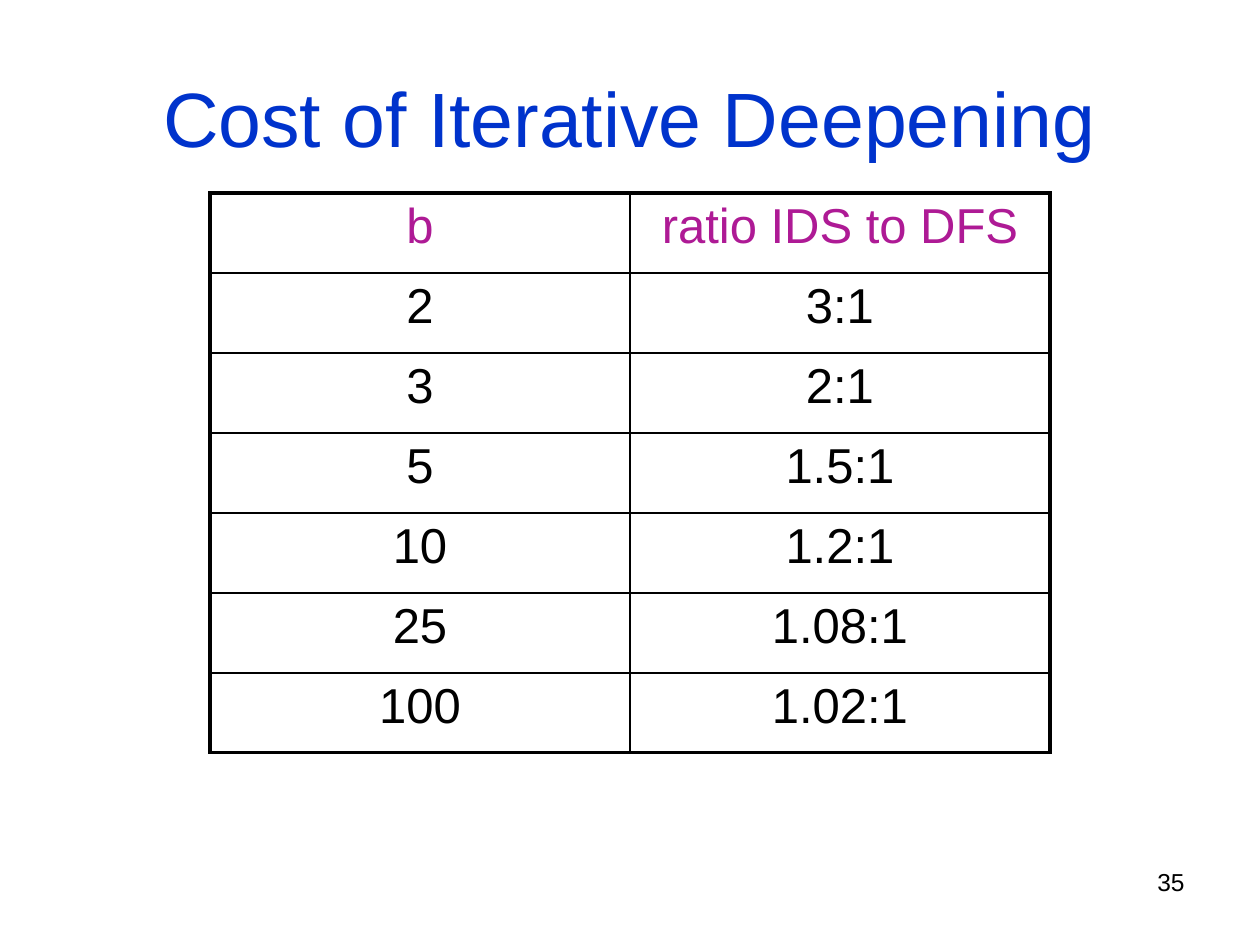
"""Build the slide on the cost of iterative deepening."""
import lxml.etree
import pptx
import pptx.dml.color
import pptx.enum.shapes
import pptx.enum.text
import pptx.oxml.ns
import pptx.util

SCALE = 914400 / 126
COLORS = {"title": "0033CC", "header": "AE1A95", "ink": "000000", "paper": "FFFFFF"}
ALIGN = pptx.enum.text.PP_ALIGN
ANCHOR = pptx.enum.text.MSO_ANCHOR
ROWS = [
    ("b", "ratio IDS to DFS"),
    ("2", "3:1"),
    ("3", "2:1"),
    ("5", "1.5:1"),
    ("10", "1.2:1"),
    ("25", "1.08:1"),
    ("100", "1.02:1"),
]
LEFT, TOP, COLUMN_WIDTH, ROW_HEIGHT = 210, 193, 420, 80


def px(*lengths):
    return [pptx.util.Emu(round(length * SCALE)) for length in lengths]


def write(frame, text, size, color, align):
    para = frame.paragraphs[0]
    para.text = text
    para.alignment = align
    para.font.name = "Arial"
    para.font.size = pptx.util.Pt(size)
    para.font.color.rgb = pptx.dml.color.RGBColor.from_string(COLORS[color])


deck = pptx.Presentation()
deck.slide_width, deck.slide_height = px(1260, 945)
page = deck.slides.add_slide(deck.slide_layouts[6])
page.background.fill.solid()
page.background.fill.fore_color.rgb = pptx.dml.color.RGBColor.from_string(COLORS["paper"])

for text, place, size, color, align, anchor in [
    ("35", (903, 861, 294, 66), 14, "ink", ALIGN.RIGHT, ANCHOR.TOP),
    ("Cost of Iterative Deepening", (63, 38, 1134, 158), 44, "title", ALIGN.CENTER, ANCHOR.MIDDLE),
]:
    box = page.shapes.add_textbox(*px(*place))
    box.text_frame.word_wrap = True
    box.text_frame.vertical_anchor = anchor
    write(box.text_frame, text, size, color, align)

column_count = len(ROWS[0])
width, height = column_count * COLUMN_WIDTH, len(ROWS) * ROW_HEIGHT
table = page.shapes.add_table(
    len(ROWS), column_count, *px(LEFT, TOP, width, height)
).table
table.first_row = table.horz_banding = False
for row in table.rows:
    row.height = px(ROW_HEIGHT)[0]
for column in table.columns:
    column.width = px(COLUMN_WIDTH)[0]

for row_index, values in enumerate(ROWS):
    for column_index, value in enumerate(values):
        cell = table.cell(row_index, column_index)
        color = "header" if row_index == 0 else "ink"
        write(cell.text_frame, value, 28, color, ALIGN.CENTER)
        cell.fill.background()
        outer_sides = {
            "lnL": column_index == 0,
            "lnR": column_index == column_count - 1,
            "lnT": row_index == 0,
            "lnB": row_index == len(ROWS) - 1,
        }
        properties = cell._tc.get_or_add_tcPr()
        for position, (side, outer) in enumerate(outer_sides.items()):
            border = lxml.etree.Element(pptx.oxml.ns.qn(f"a:{side}"))
            border.set("w", str(pptx.util.Pt(2.25 if outer else 1)))
            fill = lxml.etree.SubElement(border, pptx.oxml.ns.qn("a:solidFill"))
            lxml.etree.SubElement(fill, pptx.oxml.ns.qn("a:srgbClr"), val=COLORS["ink"])
            properties.insert(position, border)

header_y = TOP + ROW_HEIGHT
header_line = page.shapes.add_connector(
    pptx.enum.shapes.MSO_CONNECTOR.STRAIGHT, *px(LEFT, header_y, LEFT + width, header_y)
)
header_line.line.width = pptx.util.Pt(1)
header_line.line.color.rgb = pptx.dml.color.RGBColor.from_string(COLORS["ink"])
lxml.etree.SubElement(header_line._element.spPr, pptx.oxml.ns.qn("a:effectLst"))

deck.save("out.pptx")
